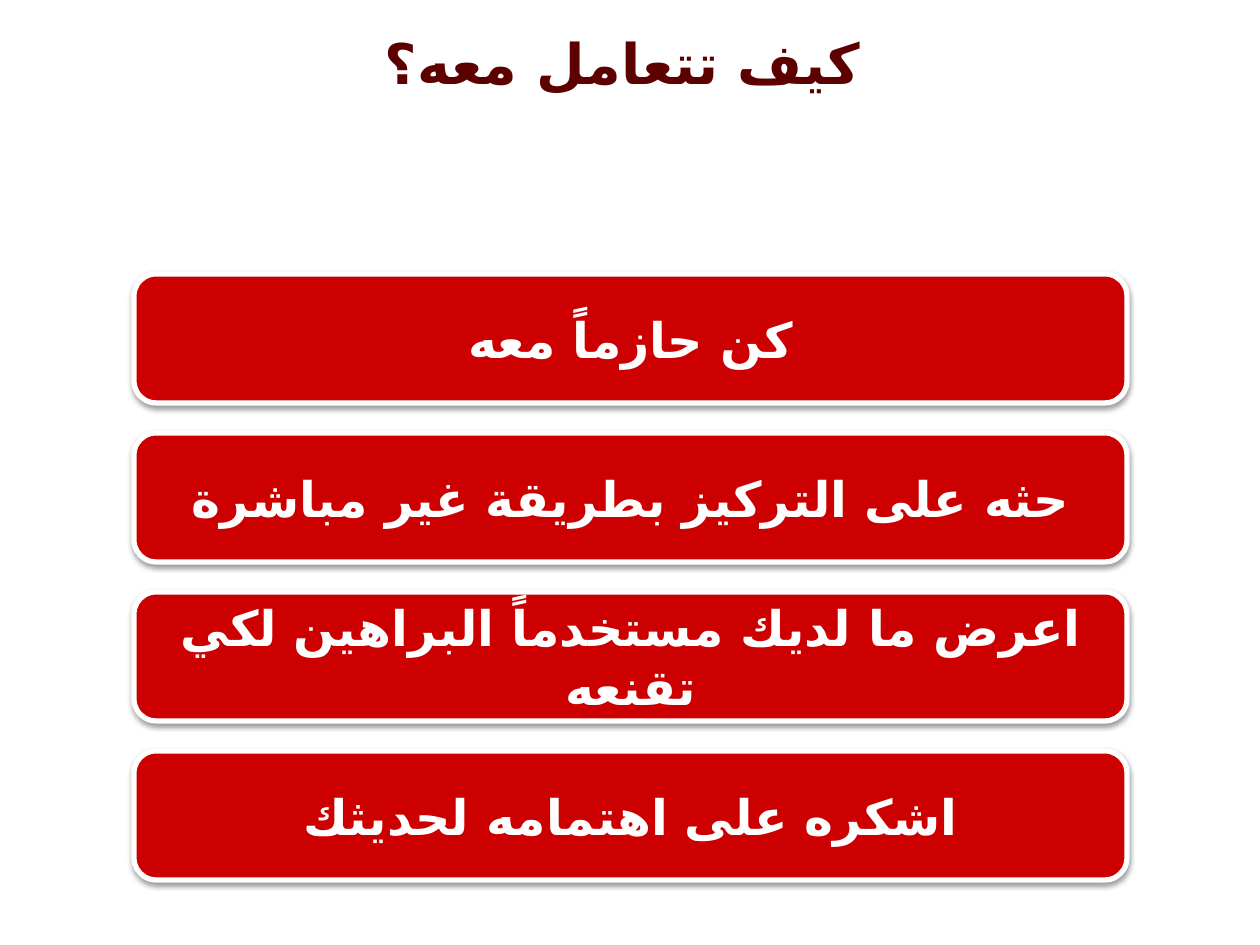
from lxml import etree
from pptx import Presentation
from pptx import util as u
from pptx.dml.color import RGBColor
from pptx.enum import shapes, text
from pptx.oxml.ns import qn

PX = 914400 // 126
COLORS = {"title": "5C0000", "card": "CC0000", "white": "FFFFFF", "shadow": "000000"}
ARABIC_FONT = "DejaVu Sans"


def write(box, words, *, font, size, color):
    """Write one centred, bold, right-to-left paragraph into a shape."""
    frame = box.text_frame
    frame.word_wrap = True
    frame.auto_size = text.MSO_AUTO_SIZE.NONE
    frame.vertical_anchor = text.MSO_ANCHOR.MIDDLE
    para = frame.paragraphs[0]
    para.alignment = text.PP_ALIGN.CENTER
    para._p.get_or_add_pPr().set("rtl", "1")
    span = para.add_run()
    span.text = words
    span.font.name = font
    span.font.size = u.Pt(size)
    span.font.bold = True
    span.font.color.rgb = RGBColor.from_string(COLORS[color])
    # Arabic letters take the complex-script font
    etree.SubElement(span._r.get_or_add_rPr(), qn("a:cs"), typeface=ARABIC_FONT)


def add_shadow(shape):
    """Give a shape a soft shadow straight below it."""
    shape.shadow.inherit = False
    effects = shape._element.spPr.find(qn("a:effectLst"))
    outer = etree.SubElement(effects, qn("a:outerShdw"), blurRad=str(u.Pt(3.1)),
                             dist=str(u.Pt(1.6)), dir="5400000", rotWithShape="0")
    tint = etree.SubElement(outer, qn("a:srgbClr"), val=COLORS["shadow"])
    etree.SubElement(tint, qn("a:alpha"), val="38000")


deck = Presentation()
deck.slide_width, deck.slide_height = 1260 * PX, 945 * PX
page = deck.slides.add_slide(deck.slide_layouts[5])

# Title
title = page.shapes.title
title.left, title.top, title.width, title.height = 0, 6 * PX, 1245 * PX, 113 * PX
write(title, "كيف تتعامل معه؟", font="Calibri", size=32, color="title")

# Stack of advice cards
LEFT, TOP, WIDTH, HEIGHT, STEP = 134, 274, 993, 129, 159
advice = [
    "كن حازماً معه",
    "حثه على التركيز بطريقة غير مباشرة",
    "اعرض ما لديك مستخدماً البراهين لكي تقنعه",
    "اشكره على اهتمامه لحديثك",
]
for row, words in enumerate(advice):
    card = page.shapes.add_shape(shapes.MSO_SHAPE.ROUNDED_RECTANGLE, LEFT * PX,
                                 (TOP + row * STEP) * PX, WIDTH * PX, HEIGHT * PX)
    card.adjustments[0] = 0.17
    card.fill.solid()
    card.fill.fore_color.rgb = RGBColor.from_string(COLORS["card"])
    card.line.color.rgb = RGBColor.from_string(COLORS["white"])
    card.line.width = u.Pt(3)
    add_shadow(card)
    write(card, words, font="Courier New", size=28, color="white")

deck.save("out.pptx")
